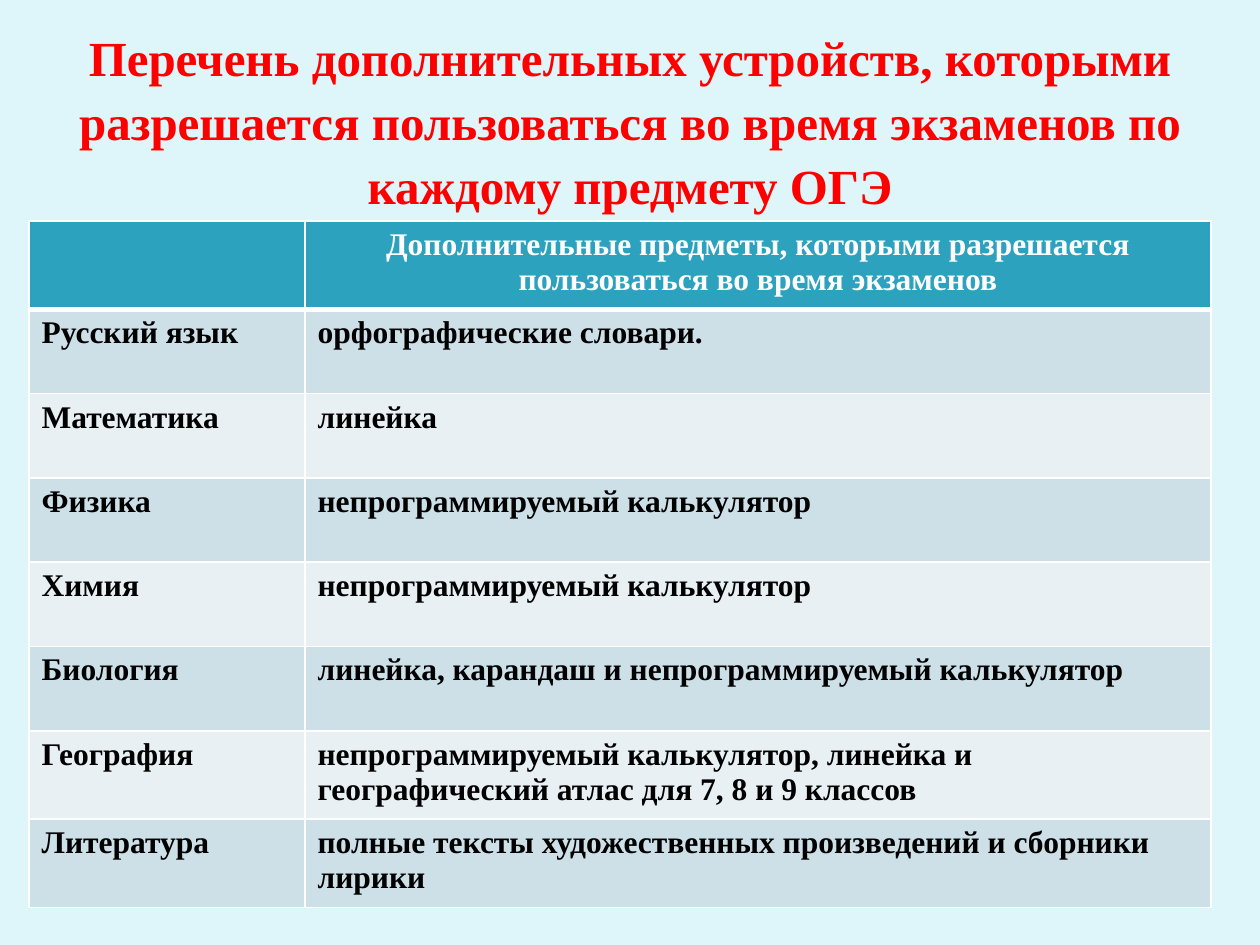
from pptx import Presentation
from pptx.dml.color import RGBColor
from pptx.enum.text import MSO_ANCHOR, PP_ALIGN
from pptx.oxml import parse_xml
from pptx.oxml.ns import nsdecls
from pptx.util import Pt

MIDDLE = MSO_ANCHOR.MIDDLE
CENTER = PP_ALIGN.CENTER
LEFT = PP_ALIGN.LEFT
SCALE = 914400 / 126
FONT = "Times New Roman"
WHITE, BLACK, RED = "FFFFFF", "000000", "FF0000"
BACK, HEAD, BANDS = "DEF5FA", "2DA2BF", ("E8F0F4", "CDE0E8")
TITLE = ("Перечень дополнительных устройств, которыми разрешается "
         "пользоваться во время экзаменов по каждому предмету ОГЭ")
ROWS = [
    ("", "Дополнительные предметы, которыми разрешается пользоваться во время экзаменов"),
    ("Русский язык", "орфографические словари."),
    ("Математика", "линейка"),
    ("Физика", "непрограммируемый калькулятор"),
    ("Химия", "непрограммируемый калькулятор"),
    ("Биология", "линейка, карандаш и непрограммируемый калькулятор"),
    ("География", "непрограммируемый калькулятор, линейка и географический атлас для 7, 8 и 9 классов"),
    ("Литература", "полные тексты художественных произведений и сборники лирики"),
]


def px(size):
    return round(size * SCALE)


def color(code):
    return RGBColor.from_string(code)


class Deck:
    """Holds the style and the current slide, and draws each kind of element."""

    def __init__(self, wide, high):
        self.file = Presentation()
        self.file.slide_width, self.file.slide_height = px(wide), px(high)
        self.slide = self.file.slides.add_slide(self.file.slide_layouts[6])
        fill = self.slide.background.fill
        fill.solid()
        fill.fore_color.rgb = color(BACK)

    def label(self, frame, text, size, shade, align):
        para = frame.paragraphs[0]
        para.text = text
        para.alignment = align
        font = para.font
        font.name, font.size, font.bold = FONT, Pt(size), True
        font.color.rgb = color(shade)
        return para

    def title(self, text, *box):
        frame = self.slide.shapes.add_textbox(*map(px, box)).text_frame
        frame.word_wrap = True
        frame.vertical_anchor = MIDDLE
        self.label(frame, text, 28, RED, CENTER).line_spacing = 1.09

    def border(self, cell, side, width):
        cell._tc.get_or_add_tcPr().append(parse_xml(
            f'<a:ln{side} {nsdecls("a")} w="{Pt(width)}"><a:solidFill>'
            f'<a:srgbClr val="{WHITE}"/></a:solidFill></a:ln{side}>'))

    def cell(self, cell, text, row):
        top = row == 0
        thick = {0: "B", 1: "T"}.get(row)
        for side in "LRTB":
            self.border(cell, side, 3 if side == thick else 1)
        cell.fill.solid()
        cell.fill.fore_color.rgb = color(HEAD if top else BANDS[row % 2])
        self.label(cell.text_frame, text, 18, WHITE if top else BLACK,
                   CENTER if top else LEFT)

    def table(self, rows, widths, left, top, high):
        table = self.slide.shapes.add_table(
            len(rows), len(widths), px(left), px(top), px(sum(widths)), px(high)).table
        for column, width in zip(table.columns, widths):
            column.width = px(width)
        for row, texts in enumerate(rows):
            for col, text in enumerate(texts):
                self.cell(table.cell(row, col), text, row)


def main():
    deck = Deck(1260, 945)
    deck.title(TITLE, 63, 29, 1134, 178)
    deck.table(ROWS, (276, 906), 29, 221, 675)
    deck.file.save("out.pptx")


if __name__ == "__main__":
    main()
